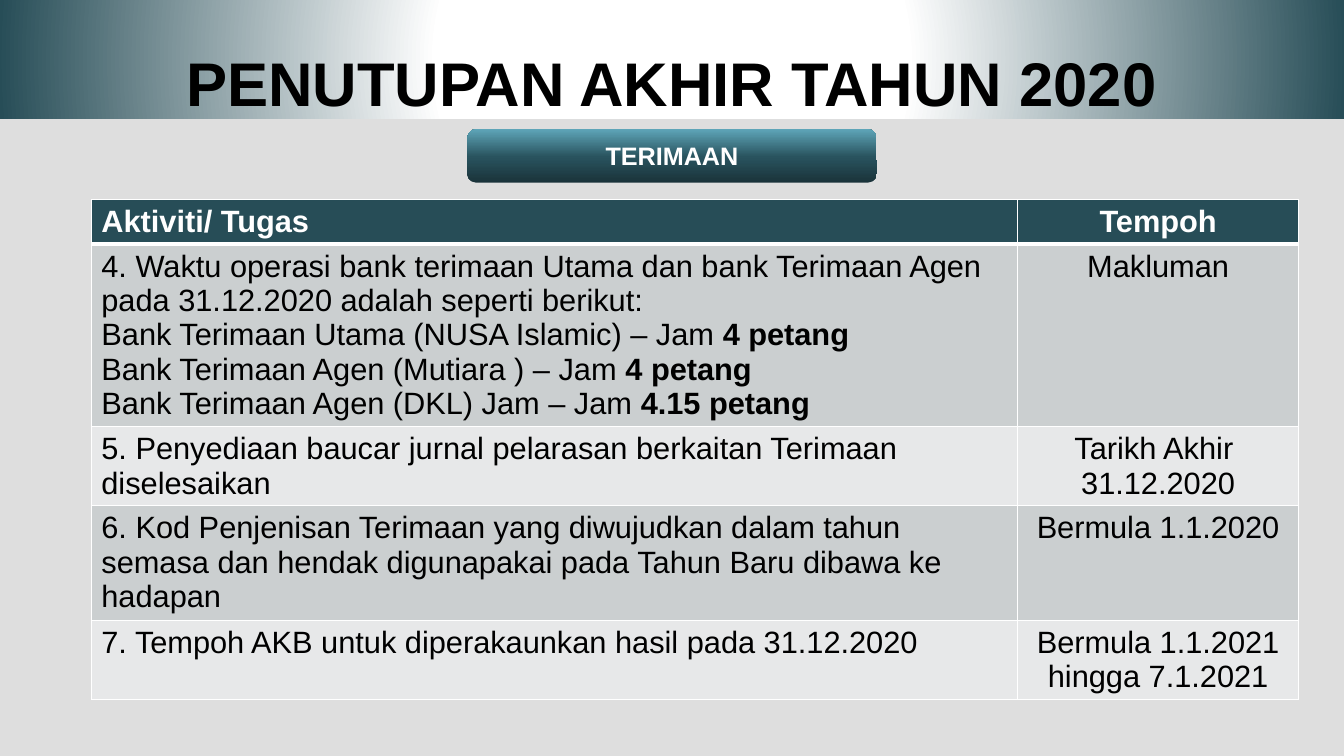
"""Build the year-end closing slide for receipts."""
from lxml import etree
from pptx import Presentation
from pptx.dml.color import RGBColor
from pptx.enum.shapes import MSO_SHAPE
from pptx.enum.text import MSO_ANCHOR, MSO_AUTO_SIZE, PP_ALIGN
from pptx.oxml.ns import nsdecls, qn
from pptx.oxml import parse_xml
from pptx.util import Pt

PX = 9525
FONT = "Arial"
TITLE_ONLY = 5
LEFT, CENTER = PP_ALIGN.LEFT, PP_ALIGN.CENTER
BOTTOM, MIDDLE = MSO_ANCHOR.BOTTOM, MSO_ANCHOR.MIDDLE
ROUNDED = MSO_SHAPE.ROUNDED_RECTANGLE
NO_FIT = MSO_AUTO_SIZE.NONE

TEAL, WHITE, BLACK = "274D57", "FFFFFF", "000000"
BANDS = ("CBCFD0", "E7E8E9")
RADIAL = '<a:path path="circle"><a:fillToRect l="50000" t="50000" r="50000" b="50000"/></a:path>'
UPWARD = '<a:lin ang="16200000" scaled="0"/>'

COLUMNS = (882, 268)
ROW_HEIGHTS = (42, 174, 75, 109, 75)
HEADER = ([("Aktiviti/ Tugas", "")], [("Tempoh", "")])
TASKS = [
    ([("4. Waktu operasi bank terimaan Utama dan bank Terimaan Agen pada "
       "31.12.2020 adalah seperti berikut:", ""),
      ("Bank Terimaan Utama (NUSA Islamic) – Jam ", "4 petang"),
      ("Bank Terimaan Agen (Mutiara ) – Jam ", "4 petang"),
      ("Bank Terimaan Agen (DKL) Jam – Jam ", "4.15 petang")],
     [("Makluman", "")]),
    ([("5. Penyediaan baucar jurnal pelarasan berkaitan Terimaan diselesaikan", "")],
     [("Tarikh Akhir ", ""), ("31.12.2020", "")]),
    ([("6. Kod Penjenisan Terimaan yang diwujudkan dalam tahun semasa dan hendak "
       "digunapakai pada Tahun Baru dibawa ke hadapan", "")],
     [("Bermula 1.1.2020", "")]),
    ([("7. Tempoh AKB untuk diperakaunkan hasil pada 31.12.2020", "")],
     [("Bermula 1.1.2021 hingga 7.1.2021", "")]),
]


def rgb(color):
    """Turn a hex string into a colour."""
    return RGBColor.from_string(color)


def add_text(p, text, size=22, color=BLACK, bold=False, align=LEFT):
    """Add a formatted run to a paragraph."""
    p.alignment = align
    r = p.add_run()
    r.text = text
    r.font.name, r.font.size, r.font.bold = FONT, Pt(size), bold
    r.font.color.rgb = rgb(color)


def place(sp, box):
    """Move a shape to a box given in px."""
    sp.left, sp.top, sp.width, sp.height = (v * PX for v in box)


def set_gradient(sp, stops, direction):
    """Fill a shape with a gradient of (percent, colour) stops."""
    sp.fill.gradient()
    gs = "".join(f'<a:gs pos="{pos * 1000}"><a:srgbClr val="{color}"/></a:gs>'
                 for pos, color in stops)
    old = sp._element.spPr.find(qn("a:gradFill"))
    old.getparent().replace(old, parse_xml(
        f'<a:gradFill {nsdecls("a")} rotWithShape="1">'
        f'<a:gsLst>{gs}</a:gsLst>{direction}</a:gradFill>'))


def set_borders(cell, bottom=1, top=1):
    """Draw white borders around a table cell, widths in points."""
    tc_pr = cell._tc.get_or_add_tcPr()
    for side, width in (("L", 1), ("R", 1), ("T", top), ("B", bottom)):
        ln = etree.SubElement(tc_pr, qn(f"a:ln{side}"), w=str(Pt(width)))
        fill = etree.SubElement(ln, qn("a:solidFill"))
        etree.SubElement(fill, qn("a:srgbClr"), val=WHITE)


def add_banner(s, box):
    """Place the title on a radial gradient banner."""
    sp = s.shapes.title
    place(sp, box)
    set_gradient(sp, [(0, WHITE), (35, WHITE), (100, TEAL)], RADIAL)
    tf = sp.text_frame
    tf.auto_size, tf.vertical_anchor, tf.margin_bottom = NO_FIT, BOTTOM, 0
    p = tf.paragraphs[0]
    p.line_spacing = 0.8
    add_text(p, "PENUTUPAN AKHIR TAHUN 2020", size=44, bold=True, align=CENTER)


def add_section_label(s, box):
    """Add the rounded section label."""
    sp = s.shapes.add_shape(ROUNDED, *(v * PX for v in box))
    sp.shadow.inherit = False
    sp.line.fill.background()
    set_gradient(sp, [(0, "1A333A"), (48, "29535E"), (100, "5EA5B8")], UPWARD)
    tf = sp.text_frame
    tf.vertical_anchor = MIDDLE
    add_text(tf.paragraphs[0], "TERIMAAN", size=18, color=WHITE, bold=True, align=CENTER)


def fill_cell(cell, lines, align, header, fill):
    """Write plain and bold text into a cell and colour it."""
    tf = cell.text_frame
    for i, (plain, strong) in enumerate(lines):
        p = tf.add_paragraph() if i else tf.paragraphs[0]
        add_text(p, plain, color=WHITE if header else BLACK, bold=header, align=align)
        if strong:
            add_text(p, strong, bold=True, align=align)
    cell.fill.solid()
    cell.fill.fore_color.rgb = rgb(fill)


def add_task_table(s, left, top):
    """Add the table of tasks and their periods."""
    rows = [HEADER, *TASKS]
    box = (left, top, sum(COLUMNS), sum(ROW_HEIGHTS))
    table = s.shapes.add_table(len(rows), len(COLUMNS), *(v * PX for v in box)).table
    for column, width in zip(table.columns, COLUMNS):
        column.width = width * PX
    for i, (row, height) in enumerate(zip(rows, ROW_HEIGHTS)):
        table.rows[i].height = height * PX
        fill = BANDS[(i - 1) % 2] if i else TEAL
        for j, (lines, align) in enumerate(zip(row, (LEFT, CENTER))):
            cell = table.cell(i, j)
            set_borders(cell, bottom=1 if i else 3, top=3 if i == 1 else 1)
            fill_cell(cell, lines, align, i == 0, fill)


def main():
    """Build and save the slide."""
    prs = Presentation()
    prs.slide_width, prs.slide_height = 1280 * PX, 720 * PX
    s = prs.slides.add_slide(prs.slide_layouts[TITLE_ONLY])
    s.background.fill.solid()
    s.background.fill.fore_color.rgb = rgb("DEDEDE")
    add_banner(s, (0, 0, 1280, 113))
    add_section_label(s, (445, 123, 390, 51))
    add_task_table(s, 87, 190)
    prs.save("out.pptx")


if __name__ == "__main__":
    main()
